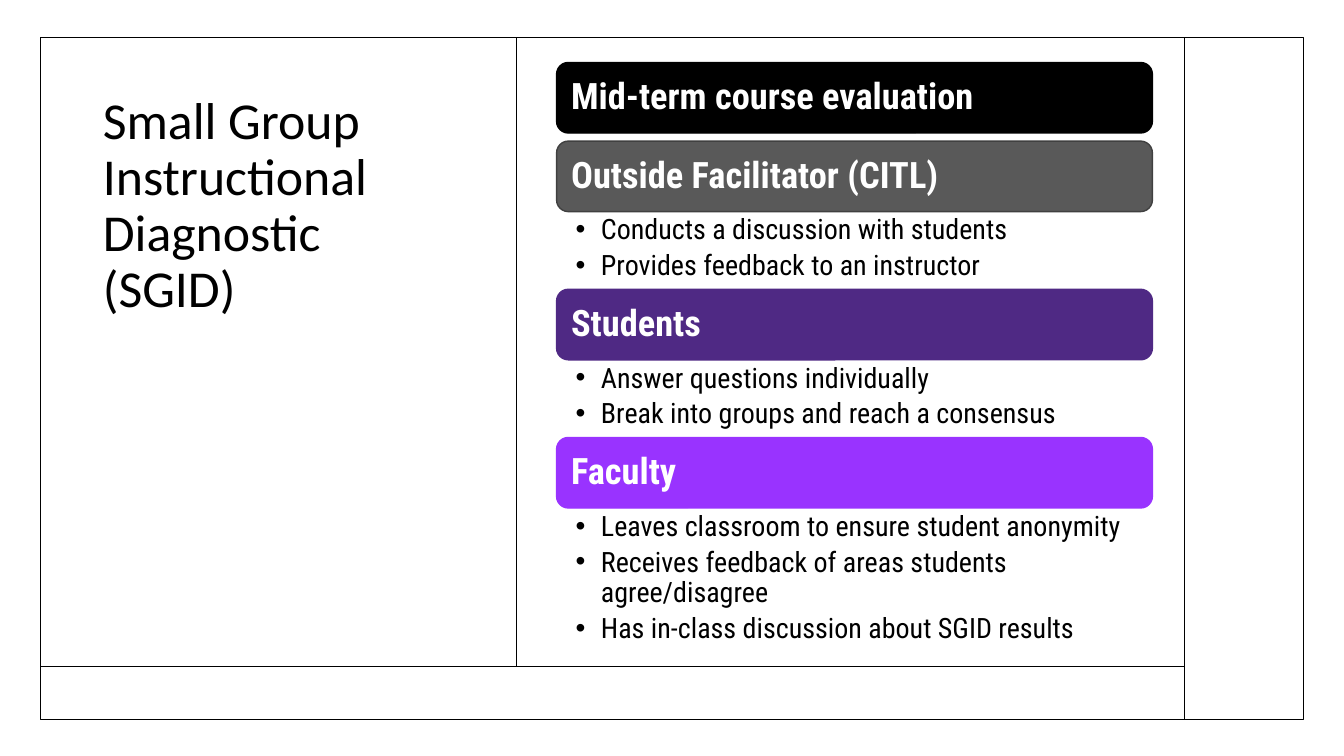
from lxml import etree
from pptx import Presentation
from pptx import util as u
from pptx.dml import color
from pptx.enum import shapes, text
from pptx.oxml import ns

BODY_FONT = "Roboto Condensed"
BANNER_H, BANNER_GAP = 0.7, 0.08
SECTIONS = [  # heading, fill, line, list height, list items
    ("Mid-term course evaluation", "000000", "000000", 0, []),
    ("Outside Facilitator (CITL)", "595959", "404040", 0.77,
     ["Conducts a discussion with students",
      "Provides feedback to an instructor"]),
    ("Students", "4F2984", "4F2984", 0.77,
     ["Answer questions individually",
      "Break into groups and reach a consensus"]),
    ("Faculty", "9933FF", "9933FF", 1.47,
     ["Leaves classroom to ensure student anonymity",
      "Receives feedback of areas students agree/disagree",
      "Has in-class discussion about SGID results"]),
]


def rgb(value):
    return color.RGBColor.from_string(value)


def inches(*values):
    return [u.Inches(v) for v in values]


def set_frame(tf, left, top, right, bottom, anchor):
    tf.word_wrap = True
    tf.auto_size = text.MSO_AUTO_SIZE.NONE
    tf.vertical_anchor = anchor
    tf.margin_left, tf.margin_top, tf.margin_right, tf.margin_bottom = inches(
        left, top, right, bottom)


def format_text(p, font, size, fill, bold=False):
    p.alignment = text.PP_ALIGN.LEFT
    p.line_spacing = 0.9
    for r in p.runs:
        r.font.name, r.font.size, r.font.bold = font, u.Pt(size), bold
        r.font.color.rgb = rgb(fill)


def add_bullet(p):
    pPr = p._p.get_or_add_pPr()
    pPr.set("marL", str(u.Inches(0.25)))
    pPr.set("indent", str(u.Inches(-0.25)))
    etree.SubElement(pPr, ns.qn("a:buFont")).set("typeface", "Arial")
    etree.SubElement(pPr, ns.qn("a:buChar")).set("char", "•")


def add_line(s, x1, y1, x2, y2):
    line = s.shapes.add_connector(
        shapes.MSO_CONNECTOR.STRAIGHT, *inches(x1, y1, x2, y2))
    line.line.color.rgb = rgb("000000")
    line.line.width = u.Pt(1)
    etree.SubElement(line._element.spPr, ns.qn("a:effectLst"))


def add_grid(s, x, y, w, h):
    """Outer frame with its inner dividing lines."""
    sp = s.shapes.add_shape(shapes.MSO_SHAPE.RECTANGLE, *inches(x, y, w, h))
    sp.shadow.inherit = False
    sp.fill.background()
    sp.line.color.rgb = rgb("000000")
    sp.line.width = u.Pt(1)
    floor, middle, side = y + 6.24, x + 4.72, x + 11.35
    add_line(s, x, floor, side, floor)
    add_line(s, middle, y, middle, floor)
    add_line(s, side, y, side, y + h)


def add_title(s, x, y, w, h):
    title = s.shapes.title
    title.left, title.top, title.width, title.height = inches(x, y, w, h)
    tf = title.text_frame
    tf.text = "Small Group Instructional Diagnostic (SGID)"
    set_frame(tf, 0.1, 0.05, 0.2, 0.05, text.MSO_ANCHOR.TOP)
    format_text(tf.paragraphs[0], "Calibri", 37, "000000")


def add_banner(s, x, y, w, heading, fill, line):
    sp = s.shapes.add_shape(
        shapes.MSO_SHAPE.ROUNDED_RECTANGLE, *inches(x, y, w, BANNER_H))
    sp.shadow.inherit = False
    sp.fill.solid()
    sp.fill.fore_color.rgb = rgb(fill)
    sp.line.color.rgb = rgb(line)
    sp.line.width = u.Pt(1)
    tf = sp.text_frame
    tf.text = heading
    set_frame(tf, 0.11, 0.11, 0.11, 0.11, text.MSO_ANCHOR.MIDDLE)
    format_text(tf.paragraphs[0], BODY_FONT, 26, "FFFFFF", bold=True)


def add_list(s, x, y, w, h, items):
    tf = s.shapes.add_textbox(*inches(x, y, w, h)).text_frame
    set_frame(tf, 0.19, 0.04, 0.2, 0.04, text.MSO_ANCHOR.TOP)
    for i, item in enumerate(items):
        p = tf.add_paragraph() if i else tf.paragraphs[0]
        p.text = item
        add_bullet(p)
        format_text(p, BODY_FONT, 20, "000000")
        p.space_after = u.Pt(4)


def add_sections(s, x, y, w):
    """Stack of banners, each followed by its list or a small gap."""
    for heading, fill, line, list_h, items in SECTIONS:
        add_banner(s, x, y, w, heading, fill, line)
        y += BANNER_H
        if items:
            add_list(s, x, y, w, list_h, items)
        y += list_h or BANNER_GAP


def main():
    prs = Presentation()
    prs.slide_width, prs.slide_height = inches(13.33, 7.5)
    s = prs.slides.add_slide(prs.slide_layouts[5])
    add_grid(s, 0.4, 0.37, 12.53, 6.77)
    add_title(s, 0.92, 0.89, 3.75, 5.21)
    add_sections(s, 5.52, 0.62, 5.91)
    prs.save("out.pptx")


if __name__ == "__main__":
    main()
